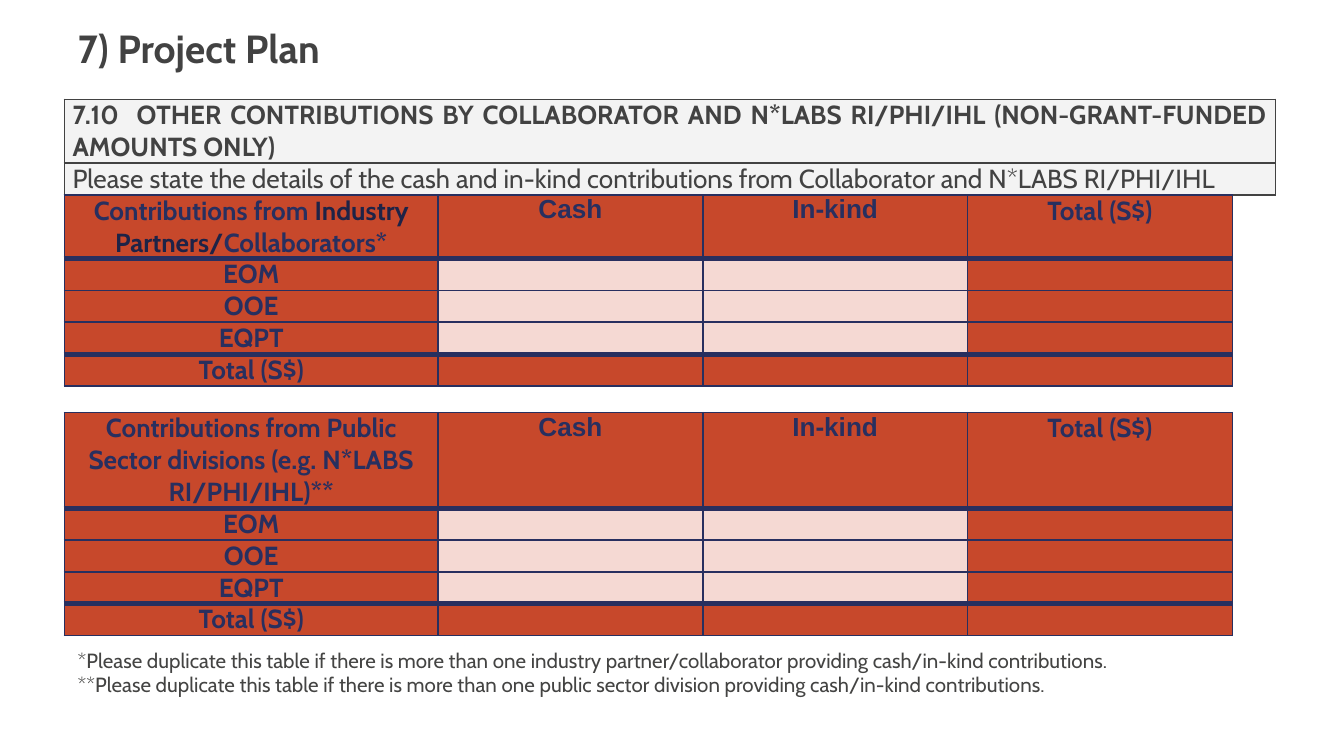
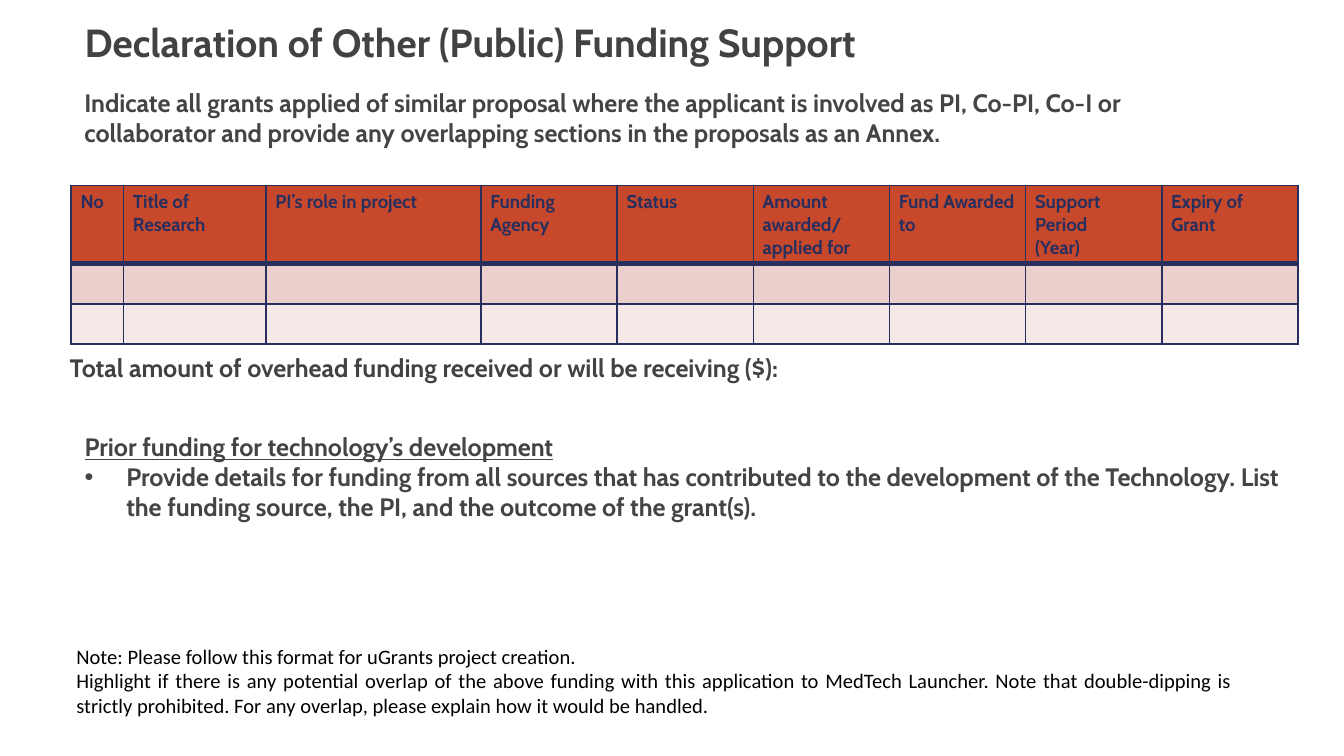
"""Build the two funding slides of a grant proposal form."""
from lxml.etree import SubElement
from pptx import Presentation
from pptx.dml.color import RGBColor
from pptx.enum.text import MSO_ANCHOR as Anchor, MSO_AUTO_SIZE as AutoSize, PP_ALIGN as Align
from pptx.oxml import parse_xml
from pptx.oxml.ns import nsdecls, qn
from pptx.util import Inches, Pt

INK, BODY_INK, NAVY, DEEP_NAVY = "424242", "444443", "282F5F", "1E2347"
RUST, BLUSH, PALE_GREY = "C7482B", "F5D9D3", "F3F3F3"
ROSE, LIGHT_ROSE = "EBCFCD", "F5E9E8"

TITLE = dict(name="Cabin", size=Pt(21), bold=True, color=INK)
PROMPT = dict(name="Cabin", size=Pt(13.5), bold=True, color=BODY_INK)
FOOTNOTE = dict(name="Cabin", size=Pt(11), color=BODY_INK)
NOTE = dict(name="Calibri", size=Pt(11), color="000000")
SECTION = dict(name="Cabin", size=Pt(14), bold=True, color=INK)
COST = dict(SECTION, color=NAVY)
GRANT = dict(COST, size=Pt(10))

COST_LAYOUT = dict(alignment=Align.CENTER, space_before=Pt(1), space_after=Pt(1))
TIGHT, ROOMY = (0.06, 0), (0.07, 0.04)


def rgb(code):
    return RGBColor.from_string(code)


def set_values(target, values):
    for name, value in values.items():
        setattr(target, name, value)


def write(frame, paragraphs, font, **layout):
    """Fill a frame; a paragraph is a string or a list of (text, font changes)."""
    for index, content in enumerate(paragraphs):
        paragraph = frame.paragraphs[0] if index == 0 else frame.add_paragraph()
        set_values(paragraph, layout)
        pieces = [(content, {})] if isinstance(content, str) else content
        for text, changes in pieces:
            run = paragraph.add_run()
            run.text = text
            values = {**font, **changes}
            run.font.color.rgb = rgb(values.pop("color"))
            set_values(run.font, values)


def place(shape, left, top, width, height):
    set_values(shape, dict(left=Inches(left), top=Inches(top),
                           width=Inches(width), height=Inches(height)))


def add_title(slide, text, box, **layout):
    title = slide.shapes.title
    place(title, *box)
    set_values(title.text_frame, dict(
        word_wrap=True, auto_size=AutoSize.NONE, vertical_anchor=Anchor.TOP))
    write(title.text_frame, [text], TITLE, alignment=Align.LEFT, **layout)


def add_text(slide, paragraphs, font, box, **layout):
    frame = slide.shapes.add_textbox(*map(Inches, box)).text_frame
    set_values(frame, dict(word_wrap=True, auto_size=AutoSize.SHAPE_TO_FIT_TEXT))
    write(frame, paragraphs, font, **layout)


def add_prior_funding(slide, heading, detail, box):
    body = slide.placeholders[1]
    place(body, *box)
    frame = body.text_frame
    set_values(frame, dict(word_wrap=True, auto_size=AutoSize.SHAPE_TO_FIT_TEXT))
    write(frame, [[(heading, dict(underline=True))], detail], PROMPT, space_before=Pt(0))
    for paragraph, bullet, indent in zip(frame.paragraphs, (None, "•"), (0, 0.31)):
        properties = paragraph._p.get_or_add_pPr()
        properties.set("marL", str(Inches(indent)))
        properties.set("indent", str(-Inches(indent)))
        if bullet:
            SubElement(properties, qn("a:buChar")).set("char", bullet)
        else:
            SubElement(properties, qn("a:buNone"))


def set_borders(cell, color, top, bottom):
    properties = cell._tc.get_or_add_tcPr()
    for index, (side, points) in enumerate(dict(L=1, R=1, T=top, B=bottom).items()):
        properties.insert(index, parse_xml(
            f'<a:ln{side} {nsdecls("a")} w="{Pt(points)}"><a:solidFill>'
            f'<a:srgbClr val="{color}"/></a:solidFill></a:ln{side}>'))


def add_grid(slide, origin, columns, rows, fill_for, line, margins, heavy_below=()):
    """Add an empty table with rule-based fills and heavy lines below some rows."""
    table = slide.shapes.add_table(
        len(rows), len(columns), *map(Inches, (*origin, sum(columns), sum(rows)))).table
    set_values(table, dict(first_row=False, horz_banding=False))
    for column, width in zip(table.columns, columns):
        column.width = Inches(width)
    across, down = map(Inches, margins)
    for r, height in enumerate(rows):
        table.rows[r].height = Inches(height)
        for c in range(len(columns)):
            cell = table.cell(r, c)
            set_values(cell, dict(margin_left=across, margin_right=across,
                                  margin_top=down, margin_bottom=down))
            cell.fill.solid()
            cell.fill.fore_color.rgb = rgb(fill_for(r, c))
            set_borders(cell, line, 3 if r - 1 in heavy_below else 1,
                        3 if r in heavy_below else 1)
            SubElement(cell.text_frame.paragraphs[0]._p, qn("a:endParaRPr")).set("sz", "1000")
    return table


def add_section_header(slide, heading, instruction):
    table = add_grid(slide, (0.48, 0.74), [9.01], [0.45, 0.23],
                     lambda r, c: PALE_GREY, INK, TIGHT)
    for row, (text, bold) in enumerate([(heading, True), (instruction, False)]):
        write(table.cell(row, 0).text_frame, [text], dict(SECTION, bold=bold),
              alignment=Align.JUSTIFY)


def add_contributions(slide, top, source):
    table = add_grid(slide, (0.48, top), [2.78] + [1.97] * 3, [0.45] + [0.23] * 4,
                     lambda r, c: BLUSH if r in (1, 2, 3) and c in (1, 2) else RUST,
                     NAVY, TIGHT, heavy_below=(0, 3))
    for row, label in enumerate([source, "EOM", "OOE", "EQPT", "Total (S$)"]):
        cell = table.cell(row, 0)
        cell.vertical_anchor = Anchor.MIDDLE
        before = Pt(2 if row == 4 else 1)
        write(cell.text_frame, [label], COST, **{**COST_LAYOUT, "space_before": before})
    headings = [("Cash", "Arial"), ("In-kind", "Arial"), ("Total (S$)", "Cabin")]
    for column, (text, face) in enumerate(headings, 1):
        write(table.cell(0, column).text_frame, [text], dict(COST, name=face), **COST_LAYOUT)


def add_grants(slide):
    headings = [["No"], ["Title of Research"], ["PI’s role in project"], ["Funding Agency"],
                ["Status"], ["Amount awarded/ applied for"], ["Fund Awarded to"],
                ["Support Period", "(Year)"], ["Expiry of Grant"]]
    leading = [0.39, 1.06, 1.6]
    columns = leading + [(9.13 - sum(leading)) / 6] * 6
    table = add_grid(slide, (0.53, 1.38), columns, [0.58, 0.3, 0.3],
                     lambda r, c: (RUST, ROSE, LIGHT_ROSE)[r], NAVY, ROOMY, heavy_below=(0,))
    for column, lines in enumerate(headings):
        write(table.cell(0, column).text_frame, lines, GRANT)


def build_project_plan(deck):
    slide = deck.slides.add_slide(deck.slide_layouts[5])
    add_title(slide, "7) Project Plan", (0.48, 0.13, 7.19, 0.45))
    add_section_header(
        slide,
        "7.10  OTHER CONTRIBUTIONS BY COLLABORATOR AND N*LABS RI/PHI/IHL "
        "(NON-GRANT-FUNDED AMOUNTS ONLY)",
        "Please state the details of the cash and in-kind contributions from "
        "Collaborator and N*LABS RI/PHI/IHL")
    add_contributions(slide, 1.45, [("Contributions from", {}),
                                    (" Industry Partners/", dict(color=DEEP_NAVY)),
                                    ("Collaborators*", {})])
    add_contributions(slide, 3.07,
                      "Contributions from Public Sector divisions (e.g. N*LABS RI/PHI/IHL)**")
    add_text(slide, [
        "*Please duplicate this table if there is more than one industry "
        "partner/collaborator providing cash/in-kind contributions.",
        "**Please duplicate this table if there is more than one public sector "
        "division providing cash/in-kind contributions."], FOOTNOTE, (0.48, 4.77, 9.26, 0.47))


def build_funding_support(deck):
    slide = deck.slides.add_slide(deck.slide_layouts[1])
    add_title(slide, "Declaration of Other (Public) Funding Support",
              (0.53, -0.05, 8.82, 0.56), line_spacing=1.4, space_before=Pt(7.5))
    add_text(slide, [
        "Indicate all grants applied of similar proposal where the applicant is involved "
        "as PI, Co-PI, Co-I or collaborator and provide any overlapping sections in the "
        "proposals as an Annex."], PROMPT, (0.53, 0.6, 8.57, 0.56))
    add_grants(slide)
    add_text(slide, ["Total amount of overhead funding received or will be receiving ($):"],
             dict(PROMPT, color=INK), (0.42, 2.57, 7.39, 0.33))
    add_prior_funding(
        slide, "Prior funding for technology’s development",
        "Provide details for funding from all sources that has contributed to the "
        "development of the Technology. List the funding source, the PI, and the "
        "outcome of the grant(s).", (0.53, 3.16, 9.13, 0.78))
    add_text(slide, [
        "Note: Please follow this format for uGrants project creation.",
        "Highlight if there is any potential overlap of the above funding with this "
        "application to MedTech Launcher. Note that double-dipping is strictly "
        "prohibited. For any overlap, please explain how it would be handled."],
        NOTE, (0.47, 4.74, 8.8, 0.66), alignment=Align.JUSTIFY)


def main():
    deck = Presentation()
    set_values(deck, dict(slide_width=Inches(10), slide_height=Inches(10 * 9 / 16)))
    build_project_plan(deck)
    build_funding_support(deck)
    deck.save("out.pptx")


if __name__ == "__main__":
    main()
